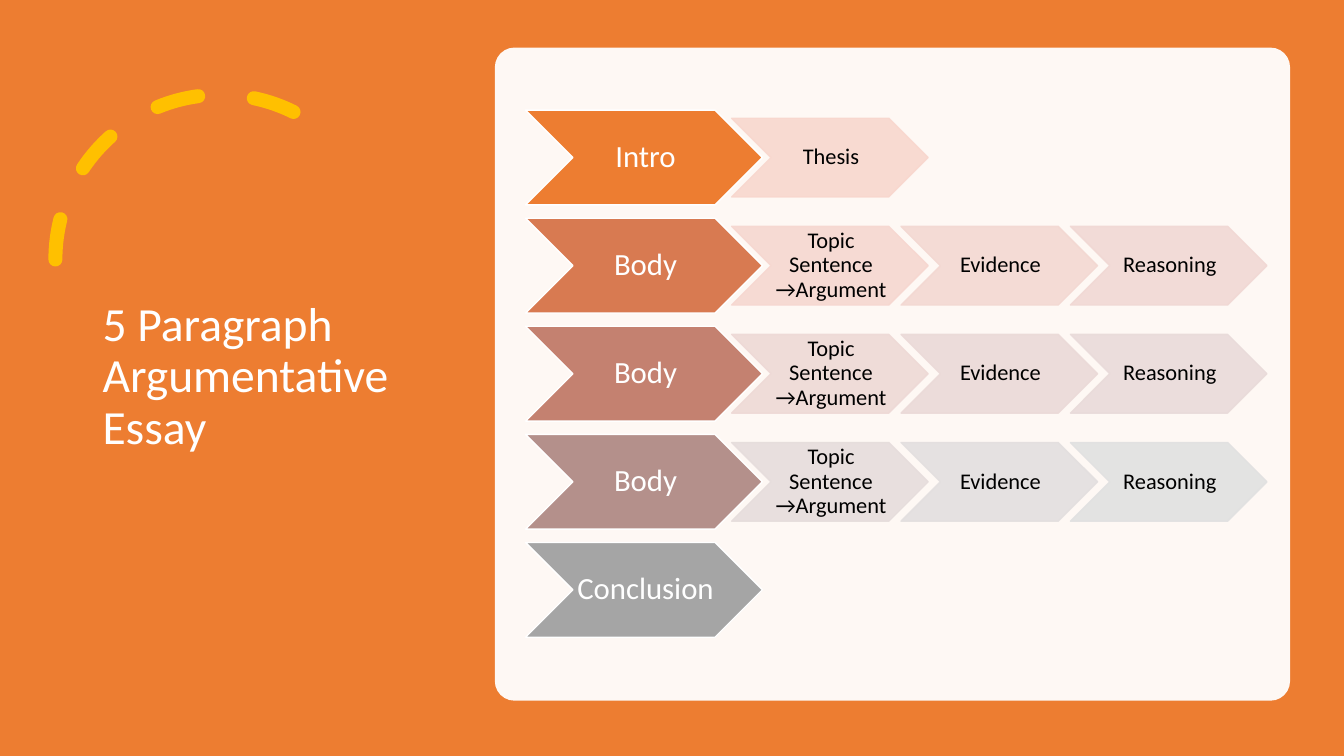
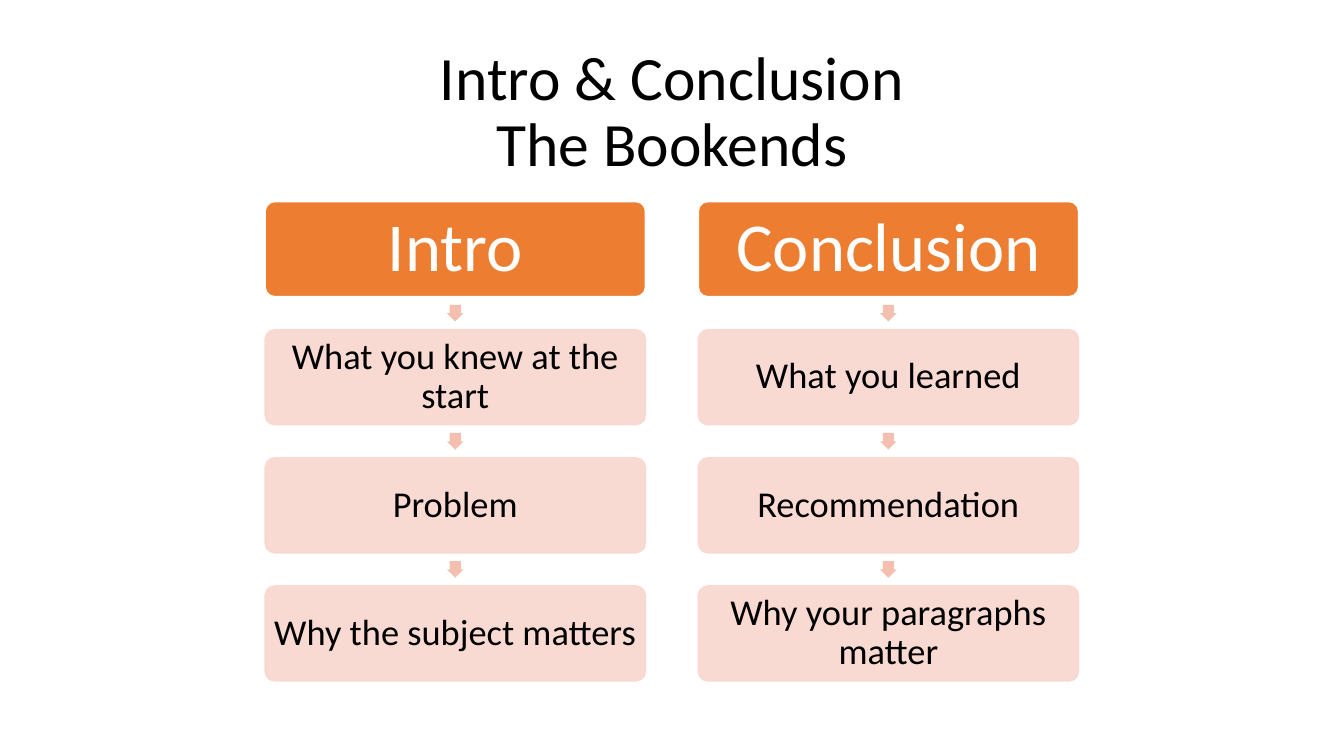
from lxml import etree
from pptx import Presentation
from pptx.dml.color import RGBColor
from pptx.enum.dml import MSO_LINE
from pptx.enum.shapes import MSO_SHAPE
from pptx.enum.text import MSO_ANCHOR, PP_ALIGN
from pptx.oxml.ns import qn
from pptx.util import Pt

RECT, ROUND = MSO_SHAPE.RECTANGLE, MSO_SHAPE.ROUNDED_RECTANGLE
CHEVRON, ARC, DOWN = MSO_SHAPE.CHEVRON, MSO_SHAPE.ARC, MSO_SHAPE.DOWN_ARROW
DASH = MSO_LINE.DASH
MIDDLE = MSO_ANCHOR.MIDDLE
LEFT, CENTER = PP_ALIGN.LEFT, PP_ALIGN.CENTER

FONT = "Calibri"
WIDE, HIGH = 960, 540
WHITE = RGBColor(0xFF, 0xFF, 0xFF)
BLACK = RGBColor(0x00, 0x00, 0x00)
ORANGE = RGBColor(0xED, 0x7D, 0x31)
GOLD = RGBColor(0xFF, 0xC0, 0x00)
BLUSH = RGBColor(0xF8, 0xD7, 0xCE)
PEACH = RGBColor(0xF4, 0xBF, 0xAE)

# Content: essay rows as (head, colour, steps with their tints)
TOPIC, PROOF, REASON = "Topic Sentence →Argument", "Evidence", "Reasoning"
ESSAY = [
    ("Intro", "ED7D31", [("Thesis", "F8D7CE")]),
    ("Body", "D87A51", [(TOPIC, "F6D7D0"), (PROOF, "F3D8D2"), (REASON, "F1D8D4")]),
    ("Body", "C48170", [(TOPIC, "EED9D6"), (PROOF, "EBDAD8"), (REASON, "E9DBDA")]),
    ("Body", "B4908B", [(TOPIC, "E6DDDC"), (PROOF, "E3DFDF"), (REASON, "E1E1E1")]),
    ("Conclusion", "A5A5A5", []),
]
BOOKENDS = [
    ("Intro", ["What you knew at the start", "Problem", "Why the subject matters"]),
    ("Conclusion", ["What you learned", "Recommendation", "Why your paragraphs matter"]),
]


def write(shape, text, size, color, align=CENTER, pads=(7.2, 3.6, 7.2, 3.6)):
    frame = shape.text_frame
    frame.word_wrap = True
    frame.vertical_anchor = MIDDLE
    frame.margin_left, frame.margin_top, frame.margin_right, frame.margin_bottom = map(Pt, pads)
    frame.text = text
    para = frame.paragraphs[0]
    para.alignment, para.line_spacing = align, 0.9
    para.font.name, para.font.size, para.font.color.rgb = FONT, Pt(size), color


def title(slide, box, text, size, color, align):
    write(slide.shapes.add_textbox(*map(Pt, box)), text, size, color, align)


def draw(slide, kind, box, fill=None, line=None, alpha=100, adjust=(), width=1):
    shape = slide.shapes.add_shape(kind, *map(Pt, box))
    shape.shadow.inherit = False
    for i, value in enumerate(adjust):
        shape.adjustments[i] = value
    if fill is None:
        shape.fill.background()
    else:
        shape.fill.solid()
        shape.fill.fore_color.rgb = fill
    if line is None:
        shape.line.fill.background()
    else:
        shape.line.color.rgb = line
        shape.line.width = Pt(width)
    if alpha < 100:
        for tint in shape._element.spPr.iter(qn("a:srgbClr")):
            etree.SubElement(tint, qn("a:alpha")).set("val", str(alpha * 1000))
    return shape


def essay(slide):
    # Backdrop, dashed arc, title and panel
    draw(slide, RECT, (0, 0, WIDE, HIGH), ORANGE)
    arc = draw(slide, ARC, (39.6, 67.7, 235.4, 235.4), line=GOLD, adjust=(146.13, 0), width=10)
    arc.line.dash_style = DASH
    arc.line._ln.set("cap", "rnd")
    arc._element.spPr.xfrm.set("flipH", "1")
    title(slide, (66.2, 50.4, 232.6, 438.5), "5 Paragraph Argumentative Essay", 34, WHITE, LEFT)
    draw(slide, ROUND, (353.5, 34, 568, 466.5), WHITE, alpha=95, adjust=(0.03,))

    # Chevron rows, steps centred on their head
    left, top, pitch, wide, high = 375.4, 78.7, 77.2, 169.2, 67.7
    start, gap, span, tall = 522.6, 121, 140.4, 56.2
    for row, (head, color, steps) in enumerate(ESSAY):
        y = top + row * pitch
        lead = draw(slide, CHEVRON, (left, y, wide, high), RGBColor.from_string(color), WHITE)
        write(lead, head, 22, WHITE, pads=(2.2, 1.1, 0, 1.1))
        for col, (text, tint) in enumerate(steps):
            shade = RGBColor.from_string(tint)
            box = (start + col * gap, y + (high - tall) / 2, span, tall)
            write(draw(slide, CHEVRON, box, shade, shade, 90), text, 16, BLACK,
                  pads=(1.6, 0.8, 0, 0.8))


def bookends(slide):
    title(slide, (66.2, 28.8, 828, 104.4), "Intro & Conclusion\vThe Bookends", 44, BLACK, CENTER)

    # Two columns: a head, then cards with an arrow in each gap
    left, top, step, pitch = 189.4, 144, 309.4, 91.5
    wide, high, tip = 271.6, 67.9, 11.9
    for col, (head, cards) in enumerate(BOOKENDS):
        x = left + col * step
        lead = draw(slide, ROUND, (x, top, wide, high), ORANGE, WHITE, adjust=(0.1,))
        write(lead, head, 49, WHITE, pads=(4.9,) * 4)
        for row, text in enumerate(cards, 1):
            y = top + row * pitch
            mid = y - (pitch - high) / 2
            draw(slide, DOWN, (x + (wide - tip) / 2, mid - tip / 2, tip, tip), PEACH,
                 adjust=(0.67, 0.5))
            card = draw(slide, ROUND, (x, y, wide, high), BLUSH, BLUSH, 90, (0.1,))
            write(card, text, 26, BLACK, pads=(2.6,) * 4)


def main():
    deck = Presentation()
    deck.slide_width, deck.slide_height = Pt(WIDE), Pt(HIGH)
    for build in (essay, bookends):
        build(deck.slides.add_slide(deck.slide_layouts[6]))
    deck.save("out.pptx")


if __name__ == "__main__":
    main()
